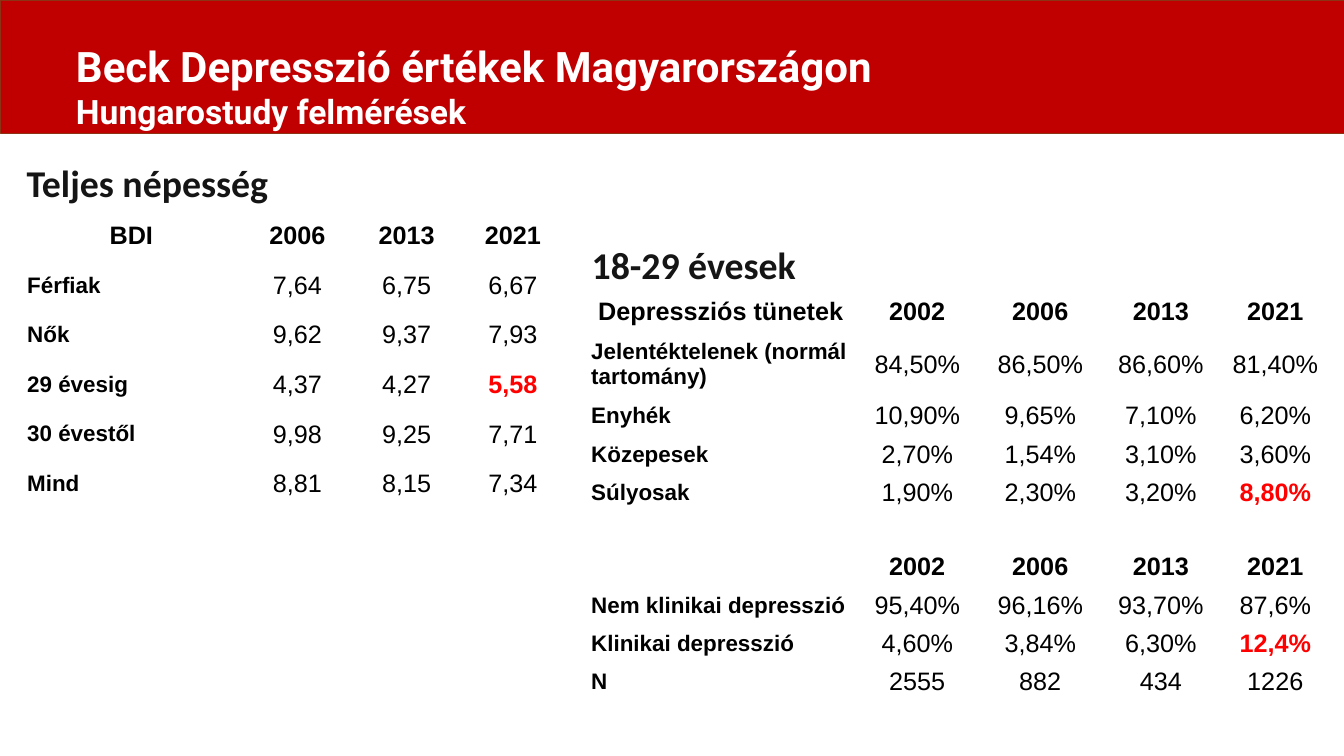
from dataclasses import dataclass

from pptx import Presentation
from pptx.dml.color import RGBColor
from pptx.enum.shapes import MSO_SHAPE
from pptx.enum.text import MSO_ANCHOR, PP_ALIGN
from pptx.util import Cm, Pt


@dataclass(frozen=True)
class Theme:
    """Colours, fonts and type sizes of the deck."""

    band: str = "C00000"
    band_line: str = "8B3314"
    white: str = "FFFFFF"
    heading: str = "151515"
    body: str = "000000"
    alert: str = "FF0000"
    title_font: str = "Roboto"
    heading_font: str = "Calibri"
    table_font: str = "Arial"
    title_size: int = 60
    subtitle_size: int = 48
    heading_size: int = 54
    value_size: int = 36
    label_size: int = 32


class SlideBuilder:
    """Draws styled elements on the current page."""

    def __init__(self, page, theme):
        self.page = page
        self.theme = theme

    def add_span(self, para, text, font, size, colour, bold=True):
        """Append one styled run to a paragraph."""
        span = para.add_run()
        span.text = text
        span.font.name = font
        span.font.size = Pt(size)
        span.font.bold = bold
        span.font.color.rgb = RGBColor.from_string(colour)

    def add_band(self, width, height):
        """Draw the coloured band along the top edge."""
        band = self.page.shapes.add_shape(
            MSO_SHAPE.RECTANGLE, 0, 0, Cm(width), Cm(height))
        band.shadow.inherit = False
        band.fill.solid()
        band.fill.fore_color.rgb = RGBColor.from_string(self.theme.band)
        band.line.color.rgb = RGBColor.from_string(self.theme.band_line)
        band.line.width = Pt(1.25)

    def add_box(self, left, top, width, height, side, end, anchor):
        """Add a wrapping text box and return its frame."""
        box = self.page.shapes.add_textbox(Cm(left), Cm(top), Cm(width), Cm(height))
        frame = box.text_frame
        frame.word_wrap = True
        frame.margin_left = frame.margin_right = Cm(side)
        frame.margin_top = frame.margin_bottom = Cm(end)
        frame.vertical_anchor = anchor
        return frame

    def add_title(self, title, subtitle):
        """Write the title and subtitle over the band."""
        theme = self.theme
        frame = self.add_box(3.58, 1.93, 60.55, 4.88, 0.25, 0.13, MSO_ANCHOR.TOP)
        self.add_span(frame.paragraphs[0], title,
                      theme.title_font, theme.title_size, theme.white)
        self.add_span(frame.add_paragraph(), subtitle,
                      theme.title_font, theme.subtitle_size, theme.white)

    def add_heading(self, left, top, text):
        """Write the heading above a table."""
        theme = self.theme
        frame = self.add_box(left, top, 21.72, 2.59, 0.15, 0.15, MSO_ANCHOR.MIDDLE)
        self.add_span(frame.paragraphs[0], text,
                      theme.heading_font, theme.heading_size, theme.heading)

    def add_table(self, left, top, widths, heights, rows, headers, alerts,
                  side, centre_corner=False, line_spacing=None, space_after=None):
        """Add a plain table with bold headers, labels and alert values."""
        theme = self.theme
        table = self.page.shapes.add_table(
            len(rows), len(widths), Cm(left), Cm(top),
            Cm(sum(widths)), Cm(sum(heights))).table
        table.first_row = table.horz_banding = False
        for column, width in zip(table.columns, widths):
            column.width = Cm(width)
        for row, height in zip(table.rows, heights):
            row.height = Cm(height)
        for r, texts in enumerate(rows):
            for c, text in enumerate(texts):
                cell = table.cell(r, c)
                cell.fill.background()
                cell.vertical_anchor = MSO_ANCHOR.MIDDLE
                cell.margin_left = cell.margin_right = Cm(side)
                cell.margin_top = cell.margin_bottom = 0
                if not text:
                    continue
                header, label, alert = r in headers, c == 0, (r, c) in alerts
                para = cell.text_frame.paragraphs[0]
                centred = not label or (header and centre_corner)
                para.alignment = PP_ALIGN.CENTER if centred else PP_ALIGN.LEFT
                para.line_spacing = line_spacing
                para.space_after = space_after
                size = theme.label_size if label and not header else theme.value_size
                self.add_span(para, text, theme.table_font, size,
                              theme.alert if alert else theme.body,
                              header or label or alert)


POPULATION = [
    ("BDI", "2006", "2013", "2021"),
    ("Férfiak", "7,64", "6,75", "6,67"),
    ("Nők", "9,62", "9,37", "7,93"),
    ("29 évesig", "4,37", "4,27", "5,58"),
    ("30 évestől", "9,98", "9,25", "7,71"),
    ("Mind", "8,81", "8,15", "7,34"),
]
YEARS = ("2002", "2006", "2013", "2021")
YOUNG_ADULTS = [
    (" Depressziós tünetek", *YEARS),
    ("Jelentéktelenek (normál tartomány)", "84,50%", "86,50%", "86,60%", "81,40%"),
    ("Enyhék", "10,90%", "9,65%", "7,10%", "6,20%"),
    ("Közepesek", "2,70%", "1,54%", "3,10%", "3,60%"),
    ("Súlyosak", "1,90%", "2,30%", "3,20%", "8,80%"),
    ("",) * 5,
    ("", *YEARS),
    ("Nem klinikai depresszió", "95,40%", "96,16%", "93,70%", "87,6%"),
    ("Klinikai depresszió", "4,60%", "3,84%", "6,30%", "12,4%"),
    ("N", "2555", "882", "434", "1226"),
]


def main():
    """Build and save the slide."""
    deck = Presentation()
    deck.slide_width, deck.slide_height = Cm(67.74), Cm(38.1)
    page = deck.slides.add_slide(deck.slide_layouts[6])
    builder = SlideBuilder(page, Theme())
    left, right = 1.19, 29.67

    builder.add_band(67.74, 6.71)
    builder.add_title("Beck Depresszió értékek Magyarországon",
                      "Hungarostudy felmérések")
    builder.add_table(right, 14.66, [13.41, 6.3, 6.1, 6.05, 5.49],
                      [2.06, 3.28, *[1.93] * 3, 1.83, *[1.93] * 4],
                      YOUNG_ADULTS, {0, 6}, {(4, 4), (8, 4)}, 0.13)
    builder.add_table(left, 10.59, [10.85, 5.89, 5.13, 5.59], [2.5] * 6,
                      POPULATION, {0}, {(3, 3)}, 0.18, centre_corner=True,
                      line_spacing=1.07, space_after=Pt(8))
    builder.add_heading(left, 7.9, "Teljes népesség")
    builder.add_heading(right, 12.04, "18-29 évesek")
    deck.save("out.pptx")


if __name__ == "__main__":
    main()
